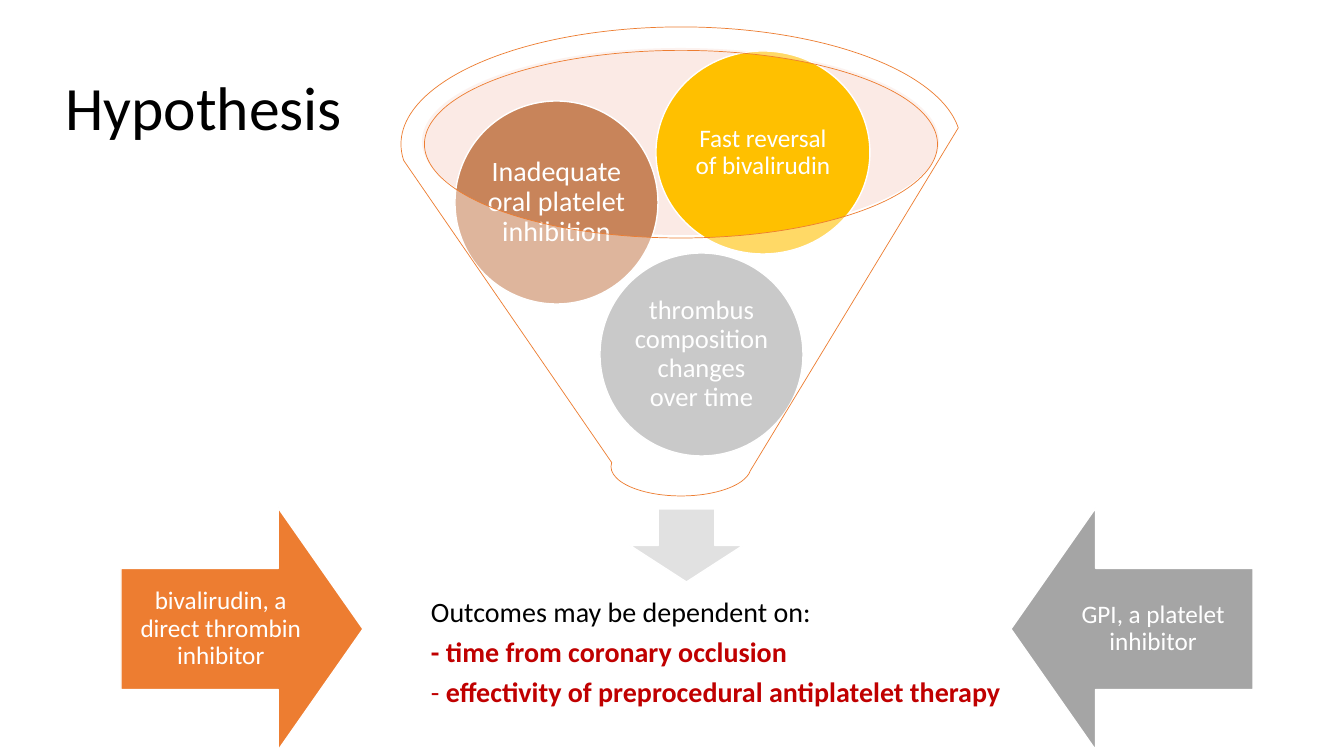
"""Build the hypothesis slide: a funnel of causes, two drug arrows and the outcomes."""
import lxml.etree
import pptx
import pptx.dml.color
import pptx.enum.shapes
import pptx.enum.text
import pptx.oxml.ns
import pptx.util

RGB = pptx.dml.color.RGBColor
SHAPE = pptx.enum.shapes.MSO_SHAPE
ALIGN = pptx.enum.text.PP_ALIGN

BLACK = RGB(0x00, 0x00, 0x00)
WHITE = RGB(0xFF, 0xFF, 0xFF)
RED = RGB(0xC0, 0x00, 0x00)
ORANGE = RGB(0xED, 0x7D, 0x31)
GREY = RGB(0xA5, 0xA5, 0xA5)
PALE_GREY = RGB(0xE1, 0xE1, 0xE1)
BROWN = RGB(0xC8, 0x84, 0x5A)
YELLOW = RGB(0xFF, 0xC0, 0x00)
PINK = RGB(0xF6, 0xCC, 0xBE)

EMU_PER_PX = 914400 / 100.8
FONT = "Calibri"
CIRCLE = 203
ARROW_TOP = 508
ARROW_SIZE = 242


def px(length):
    """Turn a length in px into EMU."""
    return pptx.util.Emu(round(length * EMU_PER_PX))


def write_text(frame, paragraphs, size, color=WHITE, align=ALIGN.CENTER, inset=3, gap=0):
    """Fill a text frame with paragraphs, each a list of (text, format) runs."""
    frame.word_wrap = True
    frame.auto_size = pptx.enum.text.MSO_AUTO_SIZE.NONE
    frame.vertical_anchor = pptx.enum.text.MSO_ANCHOR.MIDDLE
    frame.margin_left = frame.margin_right = px(inset)
    frame.margin_top = frame.margin_bottom = px(inset)
    for index, runs in enumerate(paragraphs):
        paragraph = frame.add_paragraph() if index else frame.paragraphs[0]
        paragraph.alignment = align
        paragraph.line_spacing = 0.9
        paragraph.space_before = pptx.util.Pt(0)
        paragraph.space_after = pptx.util.Pt(gap)
        for text, style in runs:
            run = paragraph.add_run()
            run.text = text
            run.font.name = FONT
            run.font.size = pptx.util.Pt(size)
            run.font.bold = style.get("bold", False)
            run.font.color.rgb = style.get("color", color)


def place(placeholder, left, top, width, height):
    """Move and size a placeholder."""
    placeholder.left, placeholder.top = px(left), px(top)
    placeholder.width, placeholder.height = px(width), px(height)


def remove_bullets(frame):
    """Drop the bullets and hanging indents of a list."""
    for paragraph in frame.paragraphs:
        properties = paragraph._p.get_or_add_pPr()
        properties.set("marL", "0")
        properties.set("indent", "0")
        lxml.etree.SubElement(properties, pptx.oxml.ns.qn("a:buNone"))


def add_figure(slide, kind, box, fill, line=WHITE, weight=1, opacity=100):
    """Add a flat preset shape, see-through when opacity is below 100."""
    figure = slide.shapes.add_shape(kind, *map(px, box))
    figure.shadow.inherit = False
    figure.fill.solid()
    figure.fill.fore_color.rgb = fill
    if opacity < 100:
        color = figure.fill._xPr.find(".//" + pptx.oxml.ns.qn("a:srgbClr"))
        alpha = lxml.etree.SubElement(color, pptx.oxml.ns.qn("a:alpha"))
        alpha.set("val", str(opacity * 1000))
    if line is None:
        figure.line.fill.background()
    else:
        figure.line.color.rgb = line
        figure.line.width = pptx.util.Pt(weight)
    return figure


def add_cause(slide, text, left, top, width, fill, size):
    """Add one labelled circle inside the funnel."""
    cause = add_figure(slide, SHAPE.OVAL, (left, top, width, CIRCLE), fill)
    write_text(cause.text_frame, [[(text, {})]], size)


def add_drug(slide, kind, text, left, fill):
    """Add one labelled arrow pointing at the outcomes."""
    drug = add_figure(slide, kind, (left, ARROW_TOP, ARROW_SIZE, ARROW_SIZE), fill)
    drug.adjustments[0] = 0.5
    drug.adjustments[1] = 0.35
    write_text(drug.text_frame, [[(text, {})]], 18, inset=14)


def main():
    """Compose the slide and save it."""
    deck = pptx.Presentation()
    deck.slide_width, deck.slide_height = px(1344), px(756)
    slide = deck.slides.add_slide(deck.slide_layouts[1])

    title, outcomes = slide.placeholders
    place(title, 55, 48, 308, 125)
    write_text(title.text_frame, [[("Hypothesis", {})]], 44, BLACK, ALIGN.LEFT, inset=10)

    strong = {"bold": True, "color": RED}
    place(outcomes, 415, 586, 622, 135)
    write_text(outcomes.text_frame, [
        [("Outcomes may be dependent on:", {})],
        [("- time from coronary occlusion", strong)],
        [("- ", {"color": RED}), ("effectivity of preprocedural antiplatelet therapy", strong)],
    ], 20, BLACK, ALIGN.LEFT, inset=16, gap=7)
    remove_bullets(outcomes.text_frame)

    add_figure(slide, SHAPE.OVAL, (422, 48, 517, 187), PINK, line=None, opacity=40)
    add_figure(slide, SHAPE.DOWN_ARROW, (630, 509, 113, 73), PALE_GREY)
    add_cause(slide, "thrombus composition changes over time", 600, 253, CIRCLE, GREY, 19)
    add_cause(slide, "Inadequate oral platelet inhibition", 455, 101, CIRCLE, BROWN, 20)
    add_cause(slide, "Fast reversal of bivalirudin", 656, 51, 214, YELLOW, 18)
    add_figure(slide, SHAPE.FUNNEL, (401, 27, 560, 469), WHITE, ORANGE, 0.5, opacity=40)

    add_drug(slide, SHAPE.RIGHT_ARROW, "bivalirudin, a direct thrombin inhibitor", 121, ORANGE)
    add_drug(slide, SHAPE.LEFT_ARROW, "GPI, a platelet inhibitor", 1011, GREY)

    deck.save("out.pptx")


if __name__ == "__main__":
    main()
